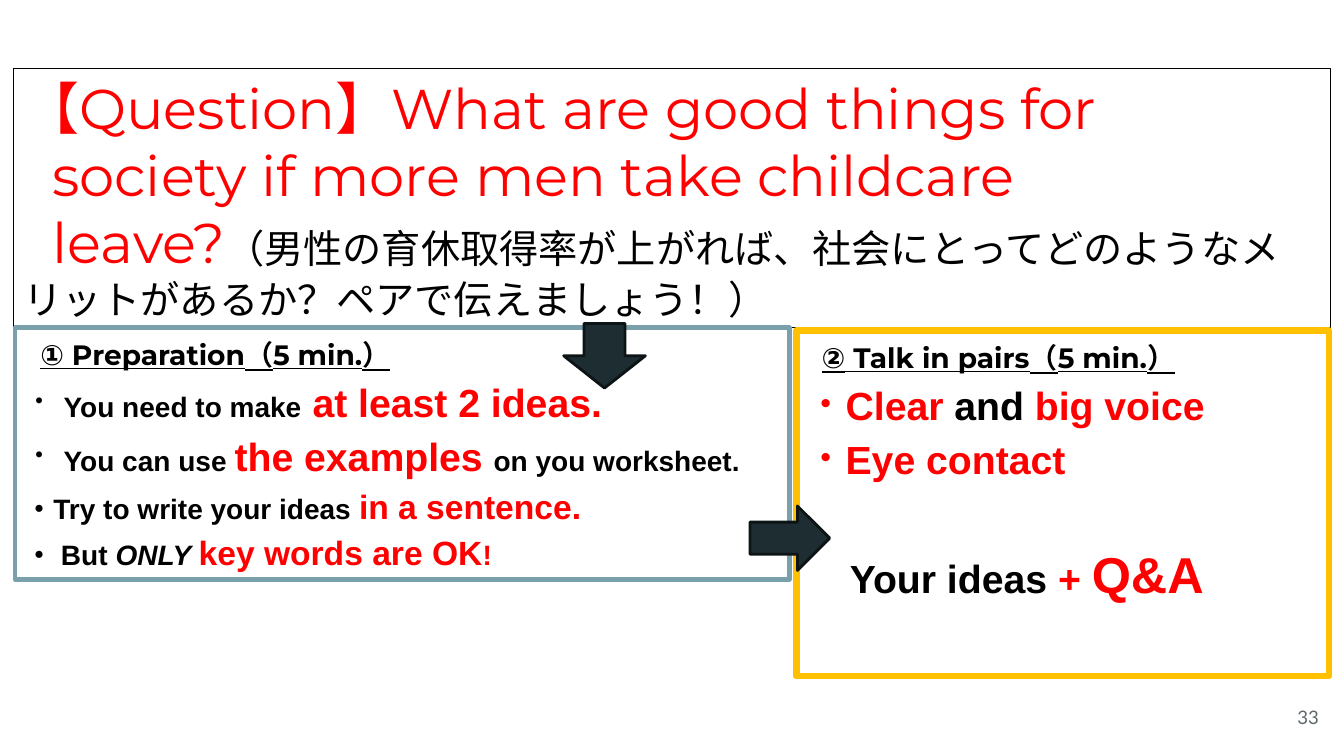
from dataclasses import dataclass

from lxml import etree
from pptx import Presentation
from pptx.dml.color import RGBColor
from pptx.enum.shapes import MSO_SHAPE
from pptx.enum.text import MSO_ANCHOR, MSO_AUTO_SIZE, PP_ALIGN
from pptx.oxml.ns import qn
from pptx.util import Inches, Pt

DOWN, RIGHT = MSO_SHAPE.DOWN_ARROW, MSO_SHAPE.RIGHT_ARROW
TOP, MIDDLE = MSO_ANCHOR.TOP, MSO_ANCHOR.MIDDLE
NO_FIT = MSO_AUTO_SIZE.NONE
ALIGN_LEFT, ALIGN_RIGHT = PP_ALIGN.LEFT, PP_ALIGN.RIGHT


@dataclass(frozen=True)
class Theme:
    display: str = "Montserrat"
    text: str = "Arial"
    number: str = "Lato"
    black: str = "000000"
    red: str = "FF0000"
    white: str = "FFFFFF"
    teal: str = "7AA0AB"
    amber: str = "FFC000"
    arrow: str = "1E2D31"
    arrow_edge: str = "0D1415"
    grey: str = "5E696C"
    title: float = 40
    huge: float = 36
    big: float = 28
    mid: float = 24
    small: float = 20
    page: float = 13.3


T = Theme()
BLACK, RED = T.black, T.red

prs = Presentation()
prs.slide_width, prs.slide_height = Inches(13.33), Inches(7.5)
s = prs.slides.add_slide(prs.slide_layouts.get_by_name("Two Content"))


def box(left, top, width, height):
    """Turn percentages of the slide's size into a position and a size."""
    w, h = prs.slide_width / 100, prs.slide_height / 100
    return [round(v) for v in (left * w, top * h, width * w, height * h)]


def write(tf, paragraphs):
    """Fill a frame with (font, options, runs); a run is text, size, colour, font changes."""
    for i, (font, options, runs) in enumerate(paragraphs):
        p = tf.paragraphs[0] if i == 0 else tf.add_paragraph()
        p.alignment = options.get("align", ALIGN_LEFT)
        p.line_spacing = options.get("spacing", 1.0)
        p.space_before = Pt(options.get("before", 0))
        p.font.name = font
        p.font.bold = options.get("bold", False)
        p.font.underline = options.get("underline", False)
        pPr = p._p.get_or_add_pPr()
        pPr.set("marL", str(Inches(options.get("margin", 0))))
        pPr.set("indent", str(Inches(options.get("indent", 0))))
        bullet = options.get("bullet")
        mark = etree.Element(qn("a:buChar" if bullet else "a:buNone"))
        if bullet:
            mark.set("char", bullet)
        pPr.find(qn("a:defRPr")).addprevious(mark)
        for text, size, color, *changes in runs:
            r = p.add_run()
            r.text = text
            r.font.size = Pt(size)
            r.font.color.rgb = RGBColor.from_string(color)
            for name, value in changes:
                setattr(r.font, name, value)


# Paragraph styles
line = dict(spacing=1.15, bold=True)
heading = dict(line, margin=0.15, underline=True)
item = dict(line, margin=0.38, indent=-0.38, bullet="・")
ideas = dict(line, indent=0.43, before=37)
inset = dict(indent=0.29)

question = [
    (T.display, {}, [("【Question】What are good things for", T.title, RED)]),
    (T.display, inset, [("society if more men take childcare", T.title, RED)]),
    (T.display, inset, [
        ("leave?", T.title, RED),
        ("（男性の育休取得率が上がれば、社会にとってどのようなメリットがあるか？ペアで伝えましょう！）",
         T.big, BLACK, ("name", T.text))]),
]
preparation = [
    (T.display, heading, [("① Preparation（5 min.）", T.small, BLACK)]),
    (T.text, item, [("You need to make", T.small, BLACK),
                    (" at least 2 ideas.", T.big, RED)]),
    (T.text, item, [("You can use ", T.small, BLACK),
                    ("the examples ", T.big, RED),
                    ("on you worksheet.", T.small, BLACK)]),
    (T.text, line, [("・Try to write your ideas ", T.small, BLACK),
                    ("in a sentence.", T.mid, RED)]),
    (T.text, line, [("・", T.small, BLACK),
                    (" ", T.mid, RED),
                    ("But ", T.small, BLACK),
                    ("ONLY ", T.small, BLACK, ("italic", True)),
                    ("key words are OK", T.mid, RED),
                    ("!", T.small, RED)]),
]
talk = [
    (T.display, heading, [("②", T.small, BLACK, ("name", T.text)),
                          (" Talk in pairs（5 min.）", T.small, BLACK)]),
    (T.text, item, [("Clear ", T.big, RED), ("and", T.big, BLACK),
                    (" big voice", T.big, RED)]),
    (T.text, item, [("Eye contact", T.big, RED)]),
    (T.text, ideas, [("Your ideas ", T.big, BLACK), ("+ ", T.big, RED),
                     ("Q&A", T.huge, RED)]),
]

# Question and the two step panels
panels = [
    (box(0.98, 9.07, 98.05, 34.27), T.white, BLACK, 0.75, question),
    (box(1.13, 43.33, 57.61, 33.33), None, T.teal, 3, preparation),
    (box(59.26, 43.73, 39.61, 45.73), None, T.amber, 4.5, talk),
]
for sp, (place, fill, edge, weight, paragraphs) in zip(s.placeholders, panels):
    sp.left, sp.top, sp.width, sp.height = place
    if fill:
        sp.fill.solid()
        sp.fill.fore_color.rgb = RGBColor.from_string(fill)
    sp.line.color.rgb = RGBColor.from_string(edge)
    sp.line.width = Pt(weight)
    tf = sp.text_frame
    tf.word_wrap, tf.auto_size, tf.vertical_anchor = True, NO_FIT, TOP
    write(tf, paragraphs)

# Arrows from the question to step 1 and on to step 2
for kind, place in ((DOWN, box(41.94, 42.8, 6.08, 8.53)),
                    (RIGHT, box(55.81, 66.93, 5.93, 8.53))):
    sp = s.shapes.add_shape(kind, *place)
    sp.shadow.inherit = False
    sp.fill.solid()
    sp.fill.fore_color.rgb = RGBColor.from_string(T.arrow)
    sp.line.color.rgb = RGBColor.from_string(T.arrow_edge)
    sp.line.width = Pt(2)

# Page number
tf = s.shapes.add_textbox(*box(92.87, 91.07, 6, 7.6)).text_frame
tf.word_wrap, tf.vertical_anchor = True, MIDDLE
write(tf, [(T.number, dict(align=ALIGN_RIGHT), [("33", T.page, T.grey)])])

prs.save("out.pptx")
